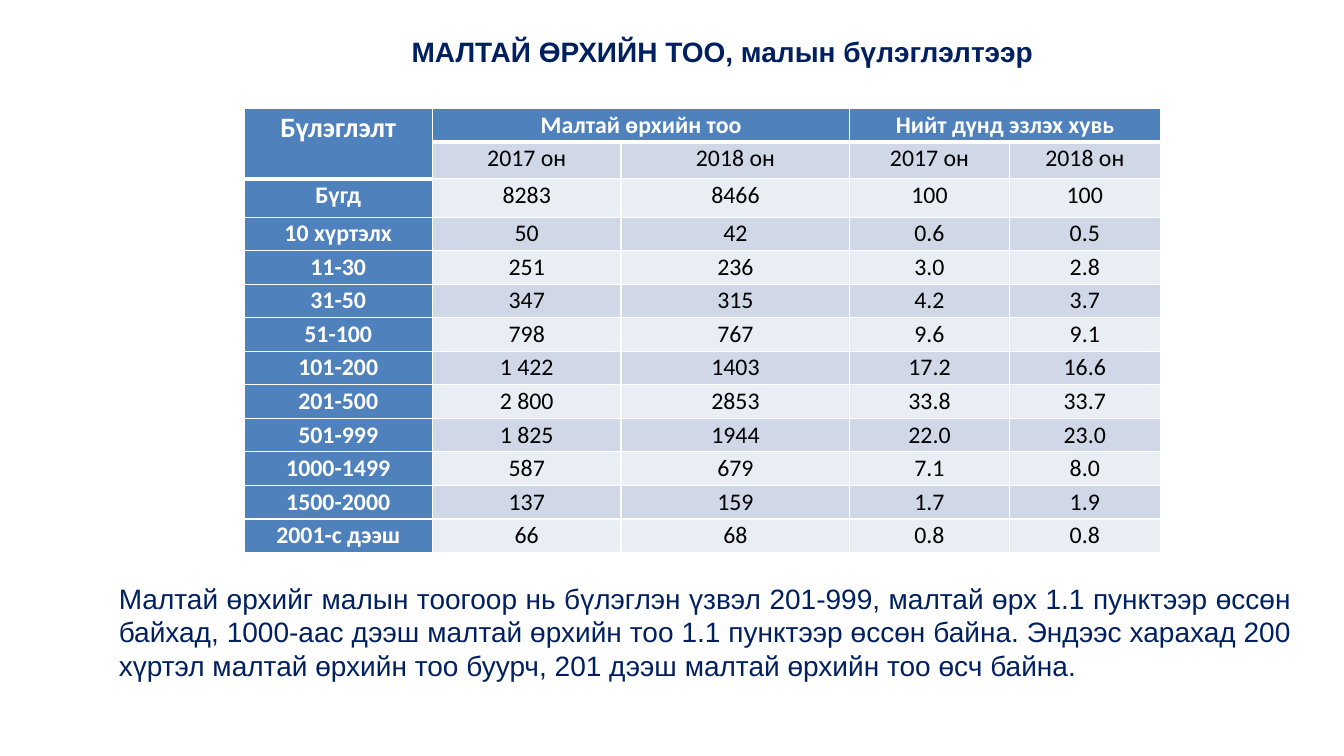
import pptx
import pptx.dml.color
import pptx.enum.shapes
import pptx.enum.text
import pptx.oxml
import pptx.oxml.ns
import pptx.util

Inches = pptx.util.Inches
Pt = pptx.util.Pt
ALIGN = pptx.enum.text.PP_ALIGN
MIDDLE = pptx.enum.text.MSO_ANCHOR.MIDDLE

COLORS = {"white": "FFFFFF", "black": "000000", "navy": "002060",
          "header": "4F81BD", "band": "D0D8E8", "light": "E9EDF4"}

HEADER = [["Бүлэглэлт", "Малтай өрхийн тоо", "", "Нийт дүнд эзлэх хувь", ""],
          ["", "2017 он", "2018 он", "2017 он", "2018 он"]]
HERDS = [["Бүгд", "8283", "8466", "100", "100"],
         ["10 хүртэлх", "50", "42", "0.6", "0.5"],
         ["11-30", "251", "236", "3.0", "2.8"],
         ["31-50", "347", "315", "4.2", "3.7"],
         ["51-100", "798", "767", "9.6", "9.1"],
         ["101-200", "1 422", "1403", "17.2", "16.6"],
         ["201-500", "2 800", "2853", "33.8", "33.7"],
         ["501-999", "1 825", "1944", "22.0", "23.0"],
         ["1000-1499", "587", "679", "7.1", "8.0"],
         ["1500-2000", "137", "159", "1.7", "1.9"],
         ["2001-с дээш", "66", "68", "0.8", "0.8"]]
SUMMARY = ("Малтай өрхийг малын тоогоор нь бүлэглэн үзвэл 201-999, малтай өрх "
           "1.1 пунктээр өссөн байхад, 1000-аас дээш малтай өрхийн тоо 1.1 "
           "пунктээр өссөн байна. Эндээс харахад 200 хүртэл малтай өрхийн тоо "
           "буурч, 201 дээш малтай өрхийн тоо өсч байна.")


class HerdSlide:
    """Holds the style and the current slide, and adds its elements."""

    def __init__(self, prs):
        self.s = prs.slides.add_slide(prs.slide_layouts[5])

    def color(self, name):
        return pptx.dml.color.RGBColor.from_string(COLORS[name])

    def apply(self, obj, values):
        for name, value in values.items():
            setattr(obj, name, value)

    def fill(self, obj, name):
        obj.fill.solid()
        obj.fill.fore_color.rgb = self.color(name)

    def text(self, tf, text, color, font, para):
        p = tf.paragraphs[0]
        self.apply(p, para)
        r = p.add_run()
        r.text = text
        self.apply(r.font, font)
        r.font.color.rgb = self.color(color)

    def panel(self, sp, box, text, bold, align):
        self.apply(sp, dict(zip(("left", "top", "width", "height"), map(Inches, box))))
        self.fill(sp, "white")
        self.apply(sp.text_frame, {"word_wrap": True, "vertical_anchor": MIDDLE,
                                   "auto_size": pptx.enum.text.MSO_AUTO_SIZE.NONE})
        self.text(sp.text_frame, text, "navy",
                  {"name": "Arial", "size": Pt(20), "bold": bold}, {"alignment": align})

    def title(self, box, text):
        self.panel(self.s.shapes.title, box, text, True, ALIGN.CENTER)

    def note(self, box, text):
        sp = self.s.shapes.add_shape(pptx.enum.shapes.MSO_SHAPE.RECTANGLE,
                                     *map(Inches, box))
        sp.shadow.inherit = False
        sp.line.fill.background()
        self.panel(sp, box, text, False, ALIGN.JUSTIFY)

    def borders(self, cell, bottom):
        tcPr = cell._tc.get_or_add_tcPr()
        widths = {"lnL": 1, "lnR": 1, "lnT": 1, "lnB": bottom}
        for i, (tag, width) in enumerate(widths.items()):
            tcPr.insert(i, pptx.oxml.parse_xml(
                f'<a:{tag} {pptx.oxml.ns.nsdecls("a")} w="{Pt(width)}"><a:solidFill>'
                f'<a:srgbClr val="{COLORS["white"]}"/></a:solidFill></a:{tag}>'))

    def cell(self, cell, text, head, band, size, bottom):
        self.apply(cell, {"margin_left": Inches(0.1), "margin_right": Inches(0.1),
                          "margin_top": 0, "margin_bottom": 0})
        self.fill(cell, "header" if head else band)
        self.borders(cell, bottom)
        if text:
            self.text(cell.text_frame, text, "white" if head else "black",
                      {"name": "Calibri", "size": Pt(size), "bold": head},
                      {"alignment": ALIGN.CENTER, "line_spacing": 1.07})

    def table(self, left, top, widths, heights, rows, spans):
        box = map(Inches, (left, top, sum(widths), sum(heights)))
        tbl = self.s.shapes.add_table(len(rows), len(widths), *box).table
        for col, width in zip(tbl.columns, widths):
            col.width = Inches(width)
        for row, height in zip(tbl.rows, heights):
            row.height = Inches(height)
        for first, last in spans:
            tbl.cell(*first).merge(tbl.cell(*last))
        for i, row in enumerate(rows):
            for j, text in enumerate(row):
                self.cell(tbl.cell(i, j), text, i == 0 or j == 0,
                          "band" if i % 2 else "light",
                          20 if i == j == 0 else 17,
                          3 if i == 0 or (i, j) == (1, 0) else 1)


def main():
    prs = pptx.Presentation()
    prs.slide_width, prs.slide_height = Inches(13.33), Inches(7.5)
    slide = HerdSlide(prs)
    slide.table(2.42, 1.08, [1.87, 1.87, 2.27, 1.58, 1.5],
                [0.33, 0.36, 0.38] + [3.33 / 10] * 10, HEADER + HERDS,
                [((0, 0), (1, 0)), ((0, 1), (0, 2)), ((0, 3), (0, 4))])
    slide.title((1.25, 0.15, 11.83, 0.71), "МАЛТАЙ ӨРХИЙН ТОО, малын бүлэглэлтээр")
    slide.note((1.08, 5.83, 11.83, 0.87), SUMMARY)
    prs.save("out.pptx")


if __name__ == "__main__":
    main()
